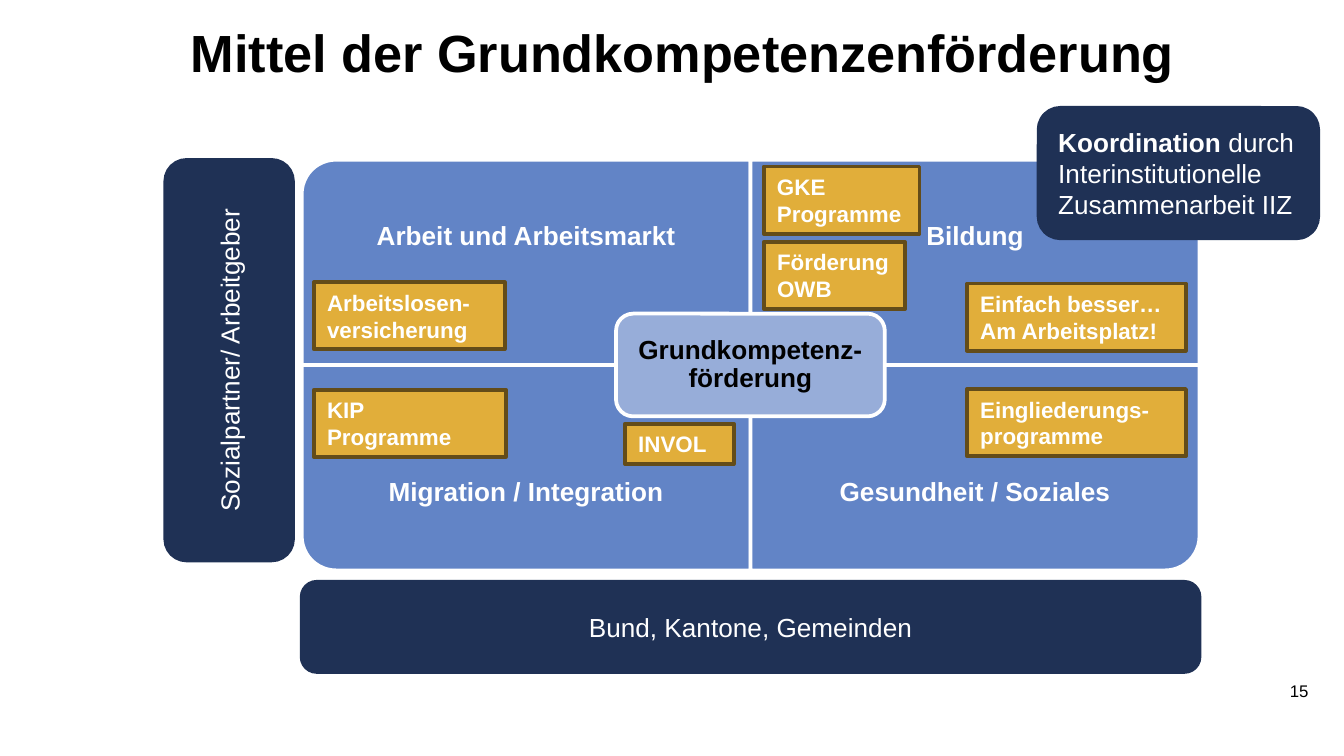
from dataclasses import dataclass

import pptx
import pptx.dml.color
import pptx.enum.shapes
import pptx.enum.text
import pptx.util

SHAPE = pptx.enum.shapes.MSO_SHAPE
ALIGN = pptx.enum.text.PP_ALIGN
ANCHOR = pptx.enum.text.MSO_ANCHOR
AUTO_SIZE = pptx.enum.text.MSO_AUTO_SIZE

COLORS = {
    "black": "000000",
    "white": "FFFFFF",
    "field": "6284C6",
    "core": "97ADD9",
    "frame": "1F3155",
    "tag": "E1AE3A",
    "tag_line": "634C19",
}

WIDTH = pptx.util.Inches(10)
HEIGHT = WIDTH * 9 // 16
CELL = WIDTH / 100
BOARD_LEFT, BOARD_TOP = 22.45, 11.88
FIELD_WIDTH, FIELD_HEIGHT = 33.4, 15.28
LABEL_SHARE = 0.75


@dataclass(frozen=True)
class Box:
    left: float
    top: float
    width: float
    height: float

    def emu(self) -> list[int]:
        return [round(n * CELL) for n in (self.left, self.top, self.width, self.height)]


@dataclass(frozen=True)
class Run:
    text: str
    bold: bool = False


@dataclass(frozen=True)
class Field:
    name: str
    column: int
    row: int
    rotation: int


@dataclass(frozen=True)
class Panel:
    box: Box
    runs: tuple[Run, ...]
    align: ALIGN = ALIGN.CENTER
    vertical: bool = False


@dataclass(frozen=True)
class Tag:
    box: Box
    lines: tuple[str, ...]


FIELDS = (
    Field("Arbeit und Arbeitsmarkt", 0, 0, 270),
    Field("Bildung", 1, 0, 0),
    Field("Migration / Integration", 0, 1, 180),
    Field("Gesundheit / Soziales", 1, 1, 90),
)

PANELS = (
    Panel(Box(12.3, 11.9, 9.5, 29.8), (Run("Sozialpartner/ Arbeitgeber"),), vertical=True),
    Panel(Box(22.45, 43.3, 66.8, 6.7), (Run("Bund, Kantone, Gemeinden"),)),
    Panel(
        Box(77.28, 8.03, 20.8, 9.7),
        (Run("Koordination", True), Run(" durch Interinstitutionelle Zusammenarbeit IIZ")),
        ALIGN.LEFT,
    ),
)

TAGS = (
    Tag(Box(23.35, 21, 14.2, 5), ("Arbeitslosen-versicherung",)),
    Tag(Box(56.83, 12.4, 11.6, 5), ("GKE", "Programme")),
    Tag(Box(23.35, 29, 14.3, 5), ("KIP Programme",)),
    Tag(Box(71.95, 28.95, 16.3, 5), ("Eingliederungs-programme",)),
    Tag(Box(71.95, 21.1, 16.3, 5), ("Einfach besser…", "Am Arbeitsplatz!")),
    Tag(Box(56.83, 18, 10.5, 5), ("Förderung", "OWB")),
    Tag(Box(46.5, 31.53, 8.1, 3), ("INVOL",)),
)


def rgb(color: str) -> pptx.dml.color.RGBColor:
    return pptx.dml.color.RGBColor.from_string(COLORS[color])


def add_run(paragraph, run: Run, size: float, color: str) -> None:
    piece = paragraph.add_run()
    piece.text = run.text
    font = piece.font
    font.name, font.size, font.bold = "Arial", pptx.util.Pt(size), run.bold
    font.color.rgb = rgb(color)


def set_insets(frame, inset: float) -> None:
    frame.margin_left = frame.margin_right = pptx.util.Inches(inset)
    frame.margin_top = frame.margin_bottom = pptx.util.Inches(inset)


def draw_shape(slide, kind: SHAPE, box: Box, fill: str, line: str):
    shape = slide.shapes.add_shape(kind, *box.emu())
    shape.shadow.inherit = False
    shape.fill.solid()
    shape.fill.fore_color.rgb = rgb(fill)
    shape.line.color.rgb = rgb(line)
    shape.line.width = pptx.util.Pt(2)
    return shape


def write_label(frame, text: str, color: str, inset: float) -> None:
    frame.word_wrap = True
    frame.vertical_anchor = ANCHOR.MIDDLE
    set_insets(frame, inset)
    paragraph = frame.paragraphs[0]
    paragraph.alignment = ALIGN.CENTER
    paragraph.line_spacing = 0.9
    add_run(paragraph, Run(text, True), 14, color)


def draw_field(slide, field: Field) -> None:
    left = BOARD_LEFT + field.column * FIELD_WIDTH
    top = BOARD_TOP + field.row * FIELD_HEIGHT
    width, height = FIELD_WIDTH, FIELD_HEIGHT
    if field.rotation % 180:
        width, height = height, width
    turned = Box(
        left + (FIELD_WIDTH - width) / 2, top + (FIELD_HEIGHT - height) / 2, width, height
    )
    shape = draw_shape(slide, SHAPE.ROUND_1_RECTANGLE, turned, "field", "white")
    shape.rotation = field.rotation
    label_top = top + field.row * (1 - LABEL_SHARE) * FIELD_HEIGHT
    area = Box(left, label_top, FIELD_WIDTH, LABEL_SHARE * FIELD_HEIGHT)
    label = slide.shapes.add_textbox(*area.emu())
    write_label(label.text_frame, field.name, "white", 0.11)


def draw_panel(slide, panel: Panel) -> None:
    shape = draw_shape(slide, SHAPE.ROUNDED_RECTANGLE, panel.box, "frame", "frame")
    frame = shape.text_frame
    frame.word_wrap = True
    frame.vertical_anchor = ANCHOR.MIDDLE
    if panel.vertical:
        shape.element.txBody.bodyPr.set("vert", "vert270")
    paragraph = frame.paragraphs[0]
    paragraph.alignment = panel.align
    for run in panel.runs:
        add_run(paragraph, run, 14, "white")


def draw_tag(slide, tag: Tag) -> None:
    frame = draw_shape(slide, SHAPE.RECTANGLE, tag.box, "tag", "tag_line").text_frame
    frame.word_wrap = True
    frame.vertical_anchor = ANCHOR.TOP
    frame.auto_size = AUTO_SIZE.SHAPE_TO_FIT_TEXT
    for index, line in enumerate(tag.lines):
        paragraph = frame.add_paragraph() if index else frame.paragraphs[0]
        paragraph.alignment = ALIGN.LEFT
        add_run(paragraph, Run(line, True), 12, "white")


def write_title(slide, text: str) -> None:
    title = slide.shapes.title
    title.left, title.top, title.width, title.height = Box(14.2, 2.3, 85.8, 7.4).emu()
    frame = title.text_frame
    frame.word_wrap = True
    frame.auto_size = AUTO_SIZE.NONE
    frame.vertical_anchor = ANCHOR.TOP
    set_insets(frame, 0)
    paragraph = frame.paragraphs[0]
    paragraph.alignment = ALIGN.LEFT
    paragraph.line_spacing = pptx.util.Pt(28)
    add_run(paragraph, Run(text, True), 28, "black")


def write_page_number(slide, number: str) -> None:
    frame = slide.shapes.add_textbox(*Box(92.45, 50.62, 4.9, 1.5).emu()).text_frame
    frame.word_wrap = True
    set_insets(frame, 0)
    frame.margin_bottom = pptx.util.Inches(0.05)
    frame.paragraphs[0].alignment = ALIGN.RIGHT
    add_run(frame.paragraphs[0], Run(number), 9, "black")


def main() -> None:
    deck = pptx.Presentation()
    deck.slide_width, deck.slide_height = WIDTH, HEIGHT
    slide = deck.slides.add_slide(deck.slide_layouts.get_by_name("Title Only"))
    write_page_number(slide, "15")
    write_title(slide, "Mittel der Grundkompetenzenförderung")
    for field in FIELDS:
        draw_field(slide, field)
    core = draw_shape(slide, SHAPE.ROUNDED_RECTANGLE, Box(45.84, 23.34, 20, 7.64), "core", "white")
    write_label(core.text_frame, "Grundkompetenz-förderung", "black", 0.06)
    for panel in PANELS:
        draw_panel(slide, panel)
    for tag in TAGS:
        draw_tag(slide, tag)
    deck.save("out.pptx")


if __name__ == "__main__":
    main()
